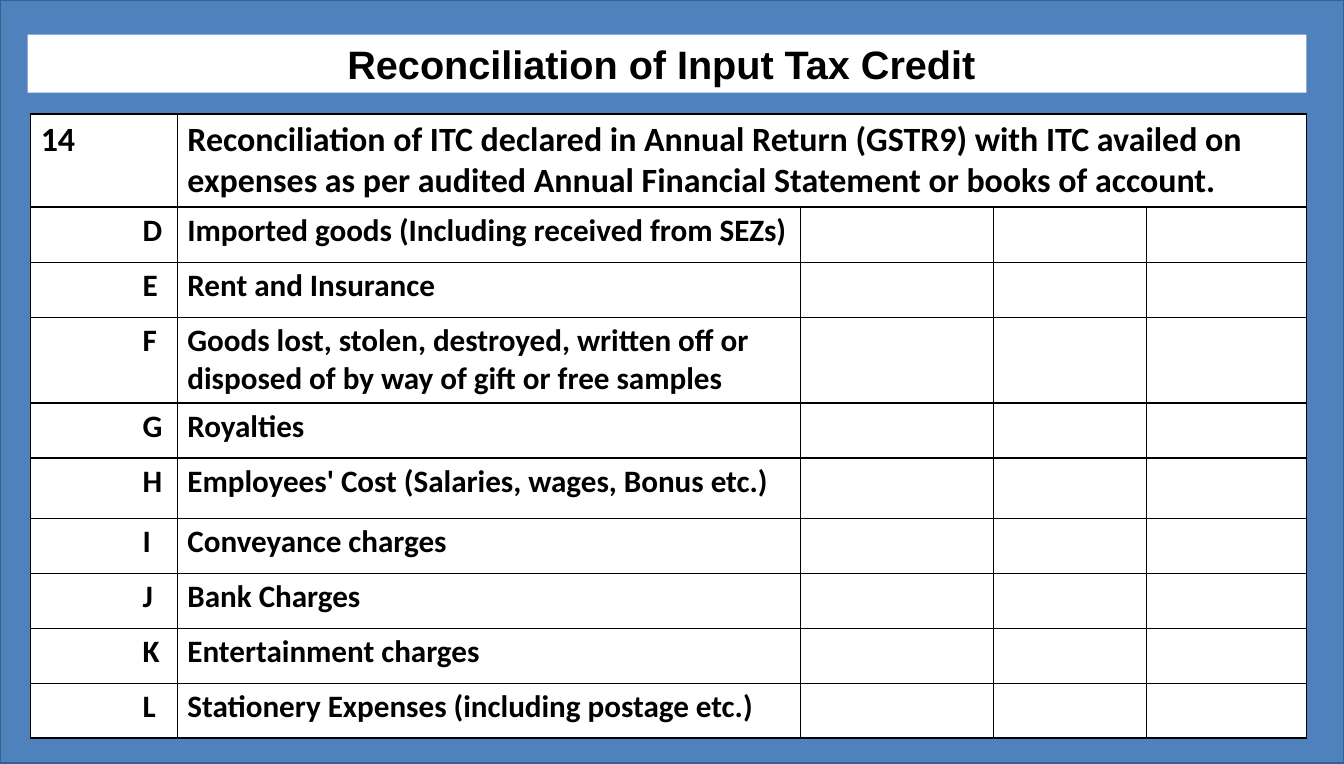
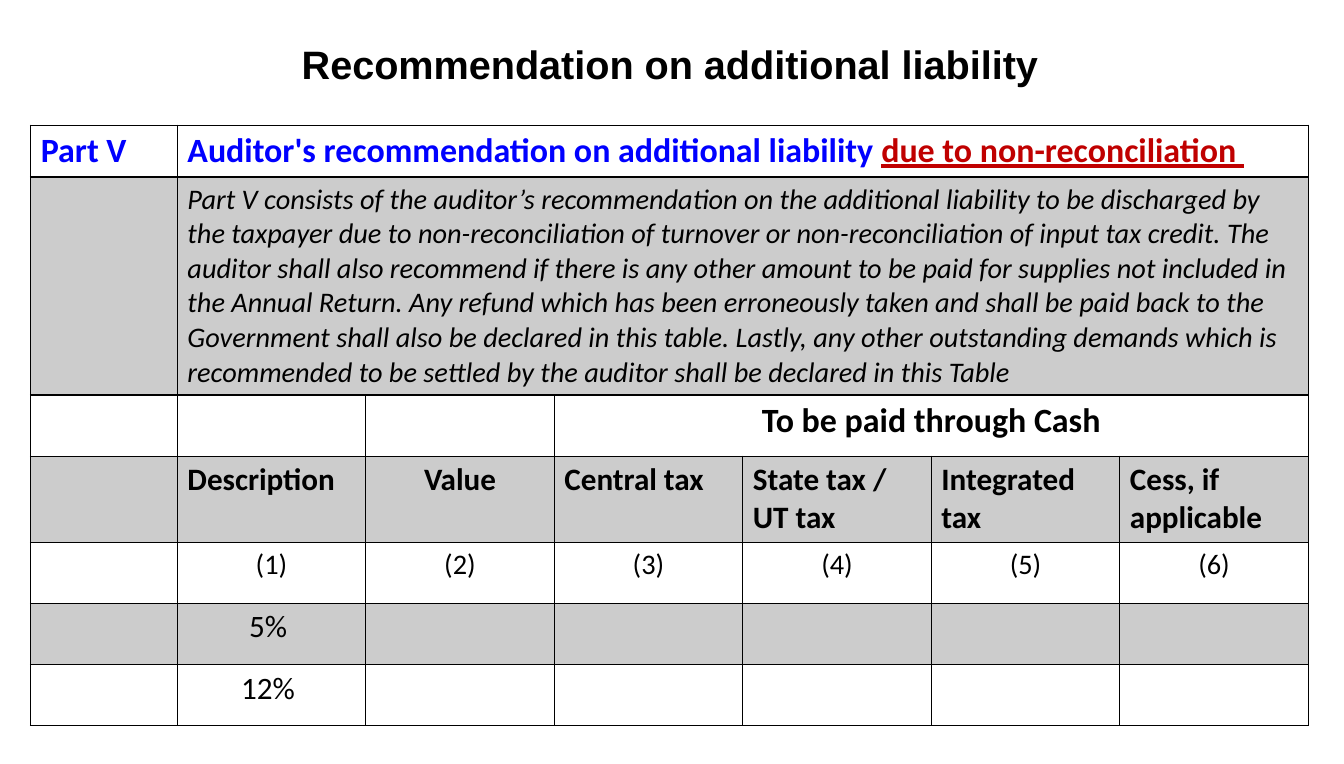
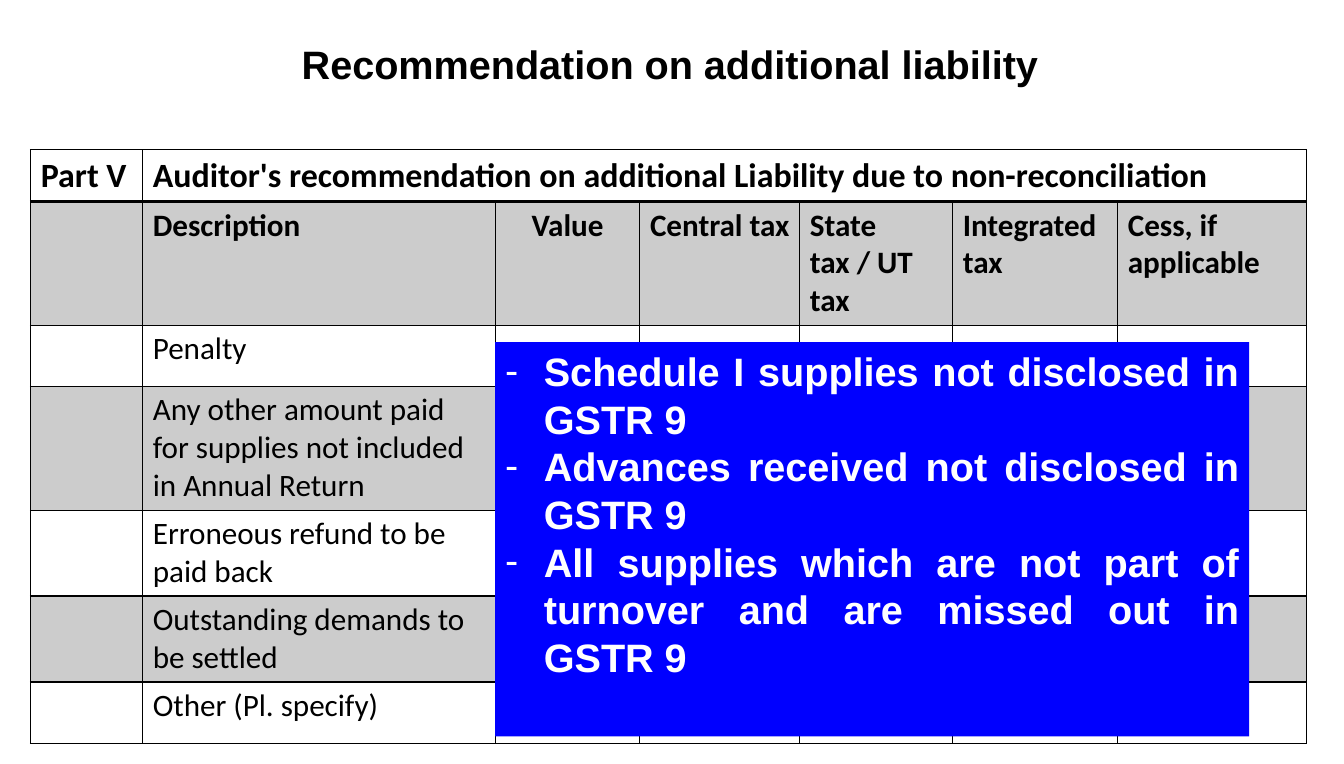
from dataclasses import dataclass
from lxml import etree
from pptx import Presentation
from pptx.dml.color import RGBColor
from pptx.enum.shapes import MSO_SHAPE
from pptx.enum.text import MSO_ANCHOR, PP_ALIGN
from pptx.oxml.ns import qn
from pptx.util import Inches, Pt

RECTANGLE = MSO_SHAPE.RECTANGLE
TOP = MSO_ANCHOR.TOP
LEFT, CENTER, JUSTIFY = PP_ALIGN.LEFT, PP_ALIGN.CENTER, PP_ALIGN.JUSTIFY

BLACK, WHITE, BLUE, RED = "000000", "FFFFFF", "0000FF", "C00000"
BAND, BACKDROP, BACKDROP_LINE = "CCCCCC", "4F81BD", "3A5F8C"

HEADING = {"name": "Arial", "size": Pt(28), "bold": True, "color": BLACK}
TABLE_TITLE = {"name": "Calibri", "size": Pt(24), "bold": True, "color": BLACK}
BOLD = {**TABLE_TITLE, "size": Pt(22)}
PLAIN = {**BOLD, "bold": False}
SMALL = {**PLAIN, "size": Pt(20)}
NOTE = {**SMALL, "italic": True}

SLIDE_WIDTH, SLIDE_HEIGHT = 13.19, 7.5
TABLE_LEFT = 0.3


@dataclass
class Cell:
    spans: list
    align: int = LEFT
    columns: int = 1
    indent: float = 0


def cell_of(text, style, **options):
    return Cell([(text, style)], **options)


def rgb(value):
    return RGBColor.from_string(value)


def set_fill(target, color):
    if color:
        target.fill.solid()
        target.fill.fore_color.rgb = rgb(color)
    else:
        target.fill.background()


def write_para(para, spans, align=LEFT, indent=0, hanging=0):
    para.alignment = align
    properties = para._p.get_or_add_pPr()
    properties.set("marL", str(Inches(indent)))
    properties.set("indent", str(Inches(-hanging)))
    for text, style in spans:
        span = para.add_run()
        span.text = text
        for name, value in style.items():
            if name == "color":
                span.font.color.rgb = rgb(value)
            else:
                setattr(span.font, name, value)


def add_dash(para):
    properties = para._p.get_or_add_pPr()
    etree.SubElement(properties, qn("a:buFont"), typeface="Arial")
    etree.SubElement(properties, qn("a:buChar"), char="-")


def add_box(page, at, fill=None, line=None):
    box = page.shapes.add_shape(RECTANGLE, *map(Inches, at))
    box.shadow.inherit = False
    set_fill(box, fill)
    if line:
        box.line.color.rgb = rgb(line)
        box.line.width = Pt(2)
    else:
        box.line.fill.background()
    frame = box.text_frame
    frame.word_wrap = True
    frame.vertical_anchor = TOP
    return box


def add_heading(page, text, left=0.53, width=12.09, fill=None):
    box = add_box(page, (left, 0.34, width, 0.57), fill)
    write_para(box.text_frame.paragraphs[0], [(text, HEADING)], CENTER)


def add_dash_list(page, at, items, fill):
    frame = add_box(page, at, fill).text_frame
    for index, item in enumerate(items):
        para = frame.add_paragraph() if index else frame.paragraphs[0]
        write_para(para, [(item, {**HEADING, "color": WHITE})], JUSTIFY, 0.38, 0.38)
        add_dash(para)


def set_borders(cell, bottom):
    properties = cell._tc.get_or_add_tcPr()
    widths = {"lnL": 1, "lnR": 1, "lnT": 1, "lnB": bottom}
    for position, (side, width) in enumerate(widths.items()):
        line = etree.Element(qn(f"a:{side}"), w=str(Pt(width)))
        solid = etree.SubElement(line, qn("a:solidFill"))
        etree.SubElement(solid, qn("a:srgbClr"), val=BLACK)
        properties.insert(position, line)


def add_grid(page, top, widths, heights, rows, fills):
    frame = page.shapes.add_table(
        len(heights), len(widths), Inches(TABLE_LEFT), Inches(top),
        Inches(sum(widths)), Inches(sum(heights)))
    table = frame.table
    table.first_row = table.horz_banding = False
    for column, width in zip(table.columns, widths):
        column.width = Inches(width)
    for index, (row, height) in enumerate(zip(table.rows, heights)):
        row.height = Inches(height)
        for cell in row.cells:
            set_fill(cell, fills[index % len(fills)])
            set_borders(cell, 1 if index else 2)
        for column, content in enumerate(rows[index]):
            if content is None:
                continue
            cell = table.cell(index, column)
            if content.columns > 1:
                cell.merge(table.cell(index, column + content.columns - 1))
            write_para(cell.text_frame.paragraphs[0], content.spans,
                       content.align, content.indent)


def tax_headers():
    names = ["Description", "Value", "Central tax", "State tax / UT tax",
             "Integrated tax", "Cess, if applicable"]
    return [None] + [cell_of(name, BOLD, align=CENTER if name == "Value" else LEFT)
                     for name in names]


def build_reconciliation(page):
    add_box(page, (0, 0, SLIDE_WIDTH, SLIDE_HEIGHT), BACKDROP, BACKDROP_LINE)
    expenses = [
        "Imported goods (Including received from SEZs)",
        "Rent and Insurance",
        "Goods lost, stolen, destroyed, written off or disposed of by way of "
        "gift or free samples",
        "Royalties",
        "Employees' Cost (Salaries, wages, Bonus etc.)",
        "Conveyance charges",
        "Bank Charges",
        "Entertainment charges",
        "Stationery Expenses (including postage etc.)",
    ]
    rows = [[cell_of("14", TABLE_TITLE),
             cell_of("Reconciliation of ITC declared in Annual Return (GSTR9) with "
                     "ITC availed on expenses as per audited Annual Financial "
                     "Statement or books of account.", TABLE_TITLE, columns=4)]]
    rows += [[cell_of(letter, BOLD, indent=1), cell_of(expense, BOLD)]
             for letter, expense in zip("DEFGHIJKL", expenses)]
    heights = [0.9, 0.54, 0.54, 0.84, 0.54, 0.59] + [0.54] * 4
    add_grid(page, 1.12, [1.44, 6.12, 1.89, 1.5, 1.57], heights, rows, [WHITE])
    add_heading(page, "Reconciliation of Input Tax Credit ", 0.27, 12.55, WHITE)


def build_liability(page):
    blue_title = {**TABLE_TITLE, "color": BLUE}
    red_title = {**TABLE_TITLE, "color": RED, "underline": True}
    note = (
        "Part V consists of the auditor’s recommendation on the additional liability "
        "to be discharged by the taxpayer due to non-reconciliation of turnover or "
        "non-reconciliation of input tax credit. The auditor shall also recommend if "
        "there is any other amount to be paid for supplies not included in the Annual "
        "Return. Any refund which has been erroneously taken and shall be paid back to "
        "the Government shall also be declared in this table. Lastly, any other "
        "outstanding demands which is recommended to be settled by the auditor shall "
        "be declared in this Table")
    rows = [
        [cell_of("Part V", blue_title),
         Cell([("Auditor's recommendation on additional liability ", blue_title),
               ("due to non-reconciliation ", red_title)], columns=6)],
        [None, cell_of(note, NOTE, columns=6)],
        [None, None, None,
         cell_of("To be paid through Cash", TABLE_TITLE, align=CENTER, columns=4)],
        tax_headers(),
        [None] + [cell_of(f"({number})", SMALL, align=CENTER) for number in range(1, 7)],
        [None, cell_of("5% ", PLAIN, align=CENTER)],
        [None, cell_of("12% ", PLAIN, align=CENTER)],
    ]
    heights = [0.5, 2.1, 0.6, 0.84, 0.6, 0.6, 0.6]
    add_grid(page, 1.23, [1.44] + [1.85] * 6, heights, rows, [None, BAND])
    add_heading(page, "Recommendation on additional liability")


def build_other_amounts(page):
    descriptions = [
        "Penalty",
        "Any other amount paid for supplies not included in Annual Return",
        "Erroneous refund to be paid back",
        "Outstanding demands to be settled",
        "Other (Pl. specify)",
    ]
    rows = [[cell_of("Part V", TABLE_TITLE),
             cell_of("Auditor's recommendation on additional Liability due to "
                     "non-reconciliation", TABLE_TITLE, columns=6)],
            tax_headers()]
    rows += [[None, cell_of(text, PLAIN)] for text in descriptions]
    widths = [1.1, 3.46, 1.42, 1.57, 1.5, 1.62, 1.85]
    heights = [0.5, 1.2, 0.6, 1.2, 0.84, 0.84, 0.6]
    add_grid(page, 1.47, widths, heights, rows, [None, BAND])
    add_heading(page, "Recommendation on additional liability")
    add_dash_list(page, (4.86, 3.36, 7.4, 3.87), [
        "Schedule I supplies not disclosed in GSTR 9",
        "Advances received not disclosed in GSTR 9",
        "All supplies which are not part of turnover and are missed out in GSTR 9",
    ], BLUE)


def main():
    deck = Presentation()
    deck.slide_width, deck.slide_height = Inches(SLIDE_WIDTH), Inches(SLIDE_HEIGHT)
    for build in (build_reconciliation, build_liability, build_other_amounts):
        build(deck.slides.add_slide(deck.slide_layouts[6]))
    deck.save("out.pptx")


if __name__ == "__main__":
    main()
